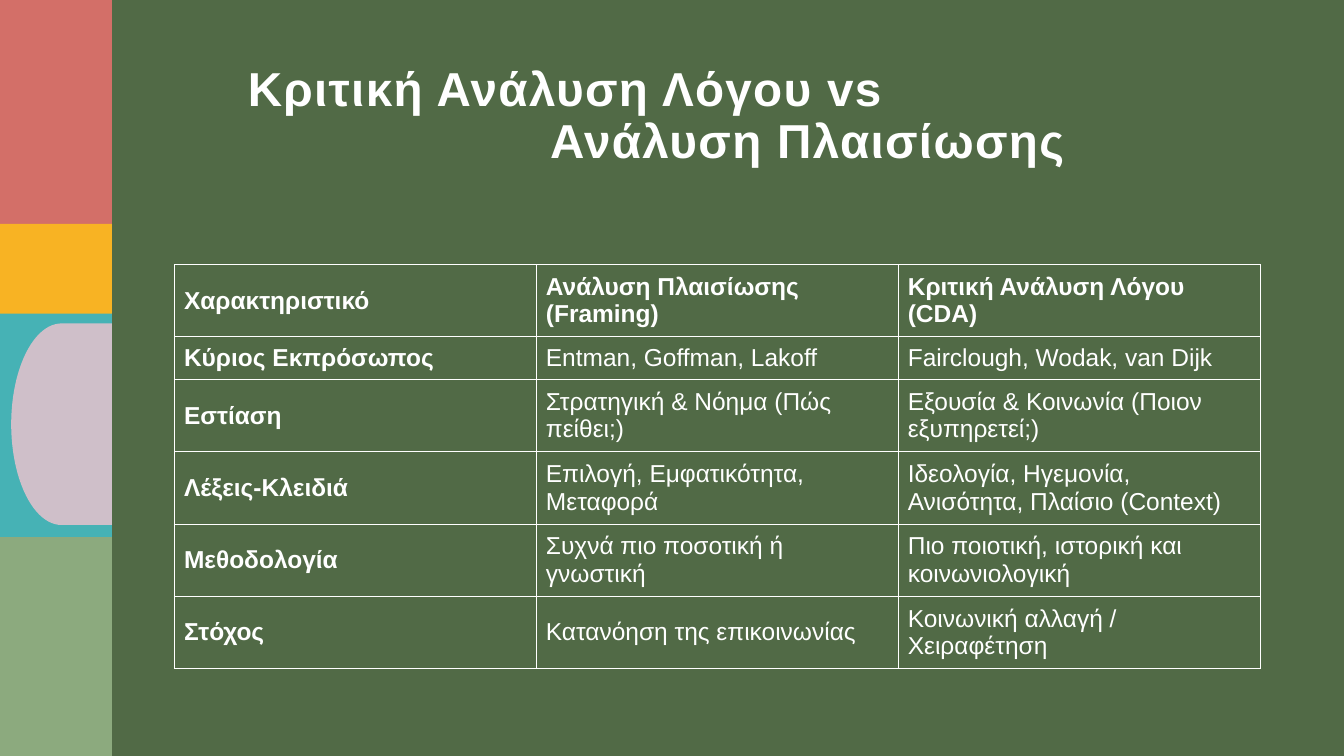
from lxml.etree import SubElement
from pptx import Presentation
from pptx.dml.color import RGBColor
from pptx.enum.shapes import MSO_SHAPE
from pptx.enum.text import MSO_ANCHOR
from pptx.oxml.ns import qn
from pptx.util import Pt

WHITE = "FFFFFF"
COMPARISON = [
    ("Χαρακτηριστικό", "Ανάλυση Πλαισίωσης (Framing)", "Κριτική Ανάλυση Λόγου (CDA)"),
    ("Κύριος Εκπρόσωπος", "Entman, Goffman, Lakoff", "Fairclough, Wodak, van Dijk"),
    ("Εστίαση", "Στρατηγική & Νόημα (Πώς πείθει;)",
     "Εξουσία & Κοινωνία (Ποιον εξυπηρετεί;)"),
    ("Λέξεις-Κλειδιά", "Επιλογή, Εμφατικότητα, Μεταφορά",
     "Ιδεολογία, Ηγεμονία, Ανισότητα, Πλαίσιο (Context)"),
    ("Μεθοδολογία", "Συχνά πιο ποσοτική ή γνωστική",
     "Πιο ποιοτική, ιστορική και κοινωνιολογική"),
    ("Στόχος", "Κατανόηση της επικοινωνίας", "Κοινωνική αλλαγή / Χειραφέτηση"),
]
ROW_HEIGHTS = [50, 30, 50, 50, 50, 50]
# Sidebar bands from back to front: top, height, colour
BANDS = [(380, 160, "8CAA7E"), (223.5, 160, "46B2B5"),
         (0, 160, "D36F68"), (160, 64, "F8B323")]


def color(value):
    return RGBColor.from_string(value)


def apply_format(target, values):
    for name, value in values.items():
        setattr(target, name, value)


def style_font(font, size, bold):
    apply_format(font, {"name": "Arial", "size": Pt(size), "bold": bold})
    font.color.rgb = color(WHITE)


def paint(shape, fill):
    shape.shadow.inherit = False
    shape.fill.solid()
    shape.fill.fore_color.rgb = color(fill)
    shape.line.fill.background()


def add_band(slide, top, height, fill):
    band = slide.shapes.add_shape(MSO_SHAPE.RECTANGLE, 0, Pt(top), Pt(80), Pt(height))
    paint(band, fill)


def add_half_disc(slide, center_x, center_y, radius, fill):
    disc = slide.shapes.add_shape(
        MSO_SHAPE.FLOWCHART_DELAY, Pt(center_x - radius), Pt(center_y - radius),
        Pt(radius), Pt(2 * radius))
    disc.rotation = 180
    paint(disc, fill)


def add_title(slide, lines):
    frame = slide.shapes.add_textbox(Pt(177), Pt(47), Pt(711.5), Pt(62)).text_frame
    apply_format(frame, {"word_wrap": True, "margin_left": 0, "margin_right": 0,
                         "margin_top": 0, "margin_bottom": 0})
    for index, (text, indent) in enumerate(lines):
        line = frame.add_paragraph() if index else frame.paragraphs[0]
        line.line_spacing = 0.9
        line._p.get_or_add_pPr().set("marL", str(Pt(indent)))
        run = line.add_run()
        run.text = text
        style_font(run.font, 34, True)
        run._r.get_or_add_rPr().set("spc", "100")


def add_borders(cell):
    properties = cell._tc.get_or_add_tcPr()
    for index, side in enumerate(("a:lnL", "a:lnR", "a:lnT", "a:lnB")):
        border = properties.makeelement(qn(side), {"w": str(Pt(0.6))})
        fill = SubElement(border, qn("a:solidFill"))
        SubElement(fill, qn("a:srgbClr"), val=WHITE)
        properties.insert(index, border)


def fill_cell(cell, text, bold):
    cell.fill.background()
    apply_format(cell, {"vertical_anchor": MSO_ANCHOR.MIDDLE,
                        "margin_left": Pt(7), "margin_right": Pt(7),
                        "margin_top": Pt(4.8), "margin_bottom": Pt(4.8)})
    run = cell.text_frame.paragraphs[0].add_run()
    run.text = text
    style_font(run.font, 17.5, bold)
    add_borders(cell)


def add_comparison(slide, rows):
    table = slide.shapes.add_table(
        len(rows), len(rows[0]), Pt(124.5), Pt(189),
        Pt(775.5), Pt(sum(ROW_HEIGHTS))).table
    apply_format(table, {"first_row": False, "horz_banding": False})
    for column in table.columns:
        column.width = Pt(258.5)
    for r, (texts, height) in enumerate(zip(rows, ROW_HEIGHTS)):
        table.rows[r].height = Pt(height)
        for c, text in enumerate(texts):
            fill_cell(table.cell(r, c), text, r == 0 or c == 0)


def main():
    deck = Presentation()
    apply_format(deck, {"slide_width": Pt(960), "slide_height": Pt(540)})
    slide = deck.slides.add_slide(deck.slide_layouts[6])
    slide.background.fill.solid()
    slide.background.fill.fore_color.rgb = color("516A46")

    # Sidebar
    for band in BANDS:
        add_band(slide, *band)
    add_half_disc(slide, 80, 303, 72, "CFBFC9")

    # Heading and comparison table
    add_title(slide, [("Κριτική Ανάλυση Λόγου vs", 0), ("Ανάλυση Πλαισίωσης", 216)])
    add_comparison(slide, COMPARISON)

    deck.save("out.pptx")


if __name__ == "__main__":
    main()
